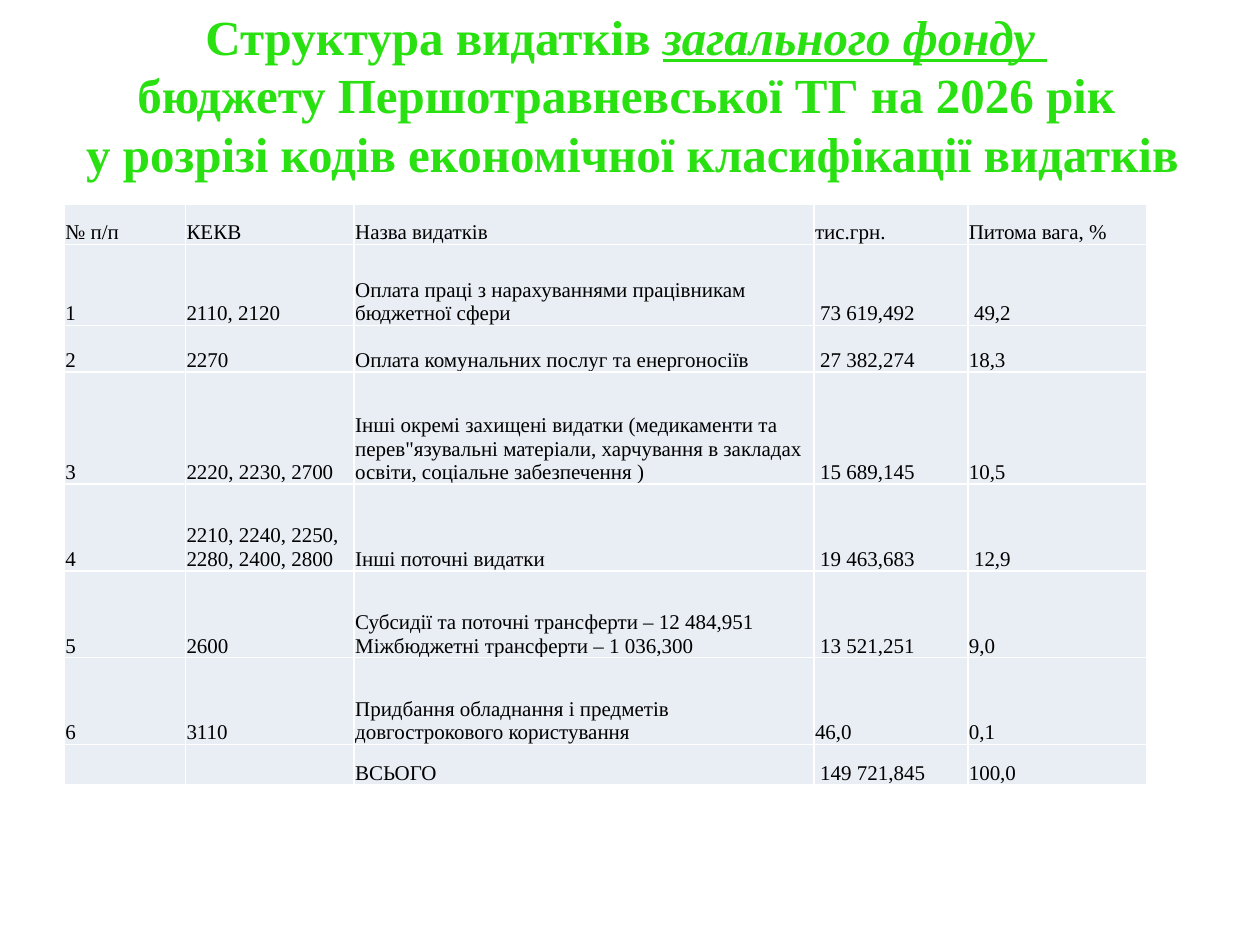
from typing import NamedTuple

from lxml.etree import SubElement
from pptx import Presentation
from pptx.dml.color import RGBColor
from pptx.enum.text import MSO_ANCHOR, MSO_AUTO_SIZE, PP_ALIGN
from pptx.oxml.ns import qn
from pptx.util import Cm, Pt

GREEN = RGBColor(0x29, 0xE0, 0x10)
BLACK = RGBColor(0x00, 0x00, 0x00)
WHITE = RGBColor(0xFF, 0xFF, 0xFF)
PALE_BLUE = RGBColor(0xE9, 0xED, 0xF4)
FONT = "Times New Roman"


class Row(NamedTuple):
    height: float
    number: str
    codes: str
    name: str
    amount: str
    share: str


COLUMN_WIDTHS = (2.44, 3.4, 9.27, 3.1, 3.61)
# "\n" starts a paragraph, "\v" breaks a line
ROWS = (
    Row(0.81, "№ п/п", "КЕКВ", "Назва видатків", "тис.грн.", "Питома вага, %"),
    Row(1.63, "1", "2110, 2120",
        "Оплата праці з нарахуваннями працівникам \vбюджетної сфери",
        " 73 619,492", " 49,2"),
    Row(0.94, "2", "2270", "Оплата комунальних послуг та енергоносіїв",
        " 27 382,274", "18,3 "),
    Row(2.26, "3", "2220, 2230, 2700",
        "Інші окремі захищені видатки (медикаменти та перев\"язувальні матеріали, "
        "харчування в закладах освіти, соціальне забезпечення )",
        " 15 689,145", "10,5 "),
    Row(1.75, "4", "2210, 2240, 2250, 2280, 2400, 2800", "Інші поточні видатки",
        " 19 463,683", " 12,9"),
    Row(1.75, "5", "2600",
        "Субсидії та поточні трансферти – 12 484,951\n"
        "Міжбюджетні трансферти – 1 036,300",
        " 13 521,251", "9,0 "),
    Row(1.75, "6", "3110",
        "Придбання обладнання і предметів довгострокового користування",
        "46,0", "0,1"),
    Row(0.81, "", "", "ВСЬОГО", " 149 721,845", "100,0 "),
)


def add_text(p, text: str, *, size: float = 12, color: RGBColor = BLACK,
             bold: bool = False, italic: bool = False, underline: bool = False) -> None:
    for i, line in enumerate(text.split("\v")):
        if i:
            p.add_line_break()
        r = p.add_run()
        r.text = line
        f = r.font
        f.name, f.size, f.color.rgb = FONT, Pt(size), color
        f.bold, f.italic, f.underline = bold, italic, underline


def add_borders(cell, color: RGBColor, width: float) -> None:
    tc_pr = cell._tc.get_or_add_tcPr()
    for i, side in enumerate(("a:lnL", "a:lnR", "a:lnT", "a:lnB")):
        ln = tc_pr.makeelement(qn(side), {"w": str(Pt(width))})
        fill = SubElement(ln, qn("a:solidFill"))
        SubElement(fill, qn("a:srgbClr"), val=str(color))
        tc_pr.insert(i, ln)


def fill_cell(cell, text: str) -> None:
    cell.fill.solid()
    cell.fill.fore_color.rgb = PALE_BLUE
    add_borders(cell, WHITE, 1)
    cell.vertical_anchor = MSO_ANCHOR.BOTTOM
    cell.margin_left = cell.margin_right = cell.margin_top = Cm(0.02)
    cell.margin_bottom = 0
    tf = cell.text_frame
    for i, part in enumerate(text.split("\n")):
        p = tf.add_paragraph() if i else tf.paragraphs[0]
        if part:
            add_text(p, part)
        else:
            p.font.size = Pt(12)


def add_title(s) -> None:
    tf = s.shapes.add_textbox(Cm(1.12), 0, Cm(23.01), Cm(3.84)).text_frame
    tf.word_wrap = True
    tf.auto_size = MSO_AUTO_SIZE.SHAPE_TO_FIT_TEXT
    lines = (
        (("Структура видатків ", False), ("загального фонду ", True)),
        (("бюджету Першотравневської ТГ на 2026 рік", False),),
        ((" у розрізі кодів економічної класифікації видатків", False),),
    )
    for i, line in enumerate(lines):
        p = tf.add_paragraph() if i else tf.paragraphs[0]
        p.alignment = PP_ALIGN.CENTER
        for text, stressed in line:
            add_text(p, text, size=28, color=GREEN, bold=True,
                     italic=stressed, underline=stressed)


def add_expense_table(s) -> None:
    table = s.shapes.add_table(
        len(ROWS), len(COLUMN_WIDTHS), Cm(1.3), Cm(4.12),
        Cm(sum(COLUMN_WIDTHS)), Cm(sum(row.height for row in ROWS))).table
    table.first_row = table.horz_banding = False
    for column, width in zip(table.columns, COLUMN_WIDTHS):
        column.width = Cm(width)
    for i, row in enumerate(ROWS):
        table.rows[i].height = Cm(row.height)
        for j, text in enumerate(row[1:]):
            fill_cell(table.cell(i, j), text)


def main() -> None:
    prs = Presentation()
    prs.slide_width, prs.slide_height = Cm(25.4), Cm(19.05)
    s = prs.slides.add_slide(prs.slide_layouts[6])
    add_title(s)
    add_expense_table(s)
    prs.save("out.pptx")


if __name__ == "__main__":
    main()
